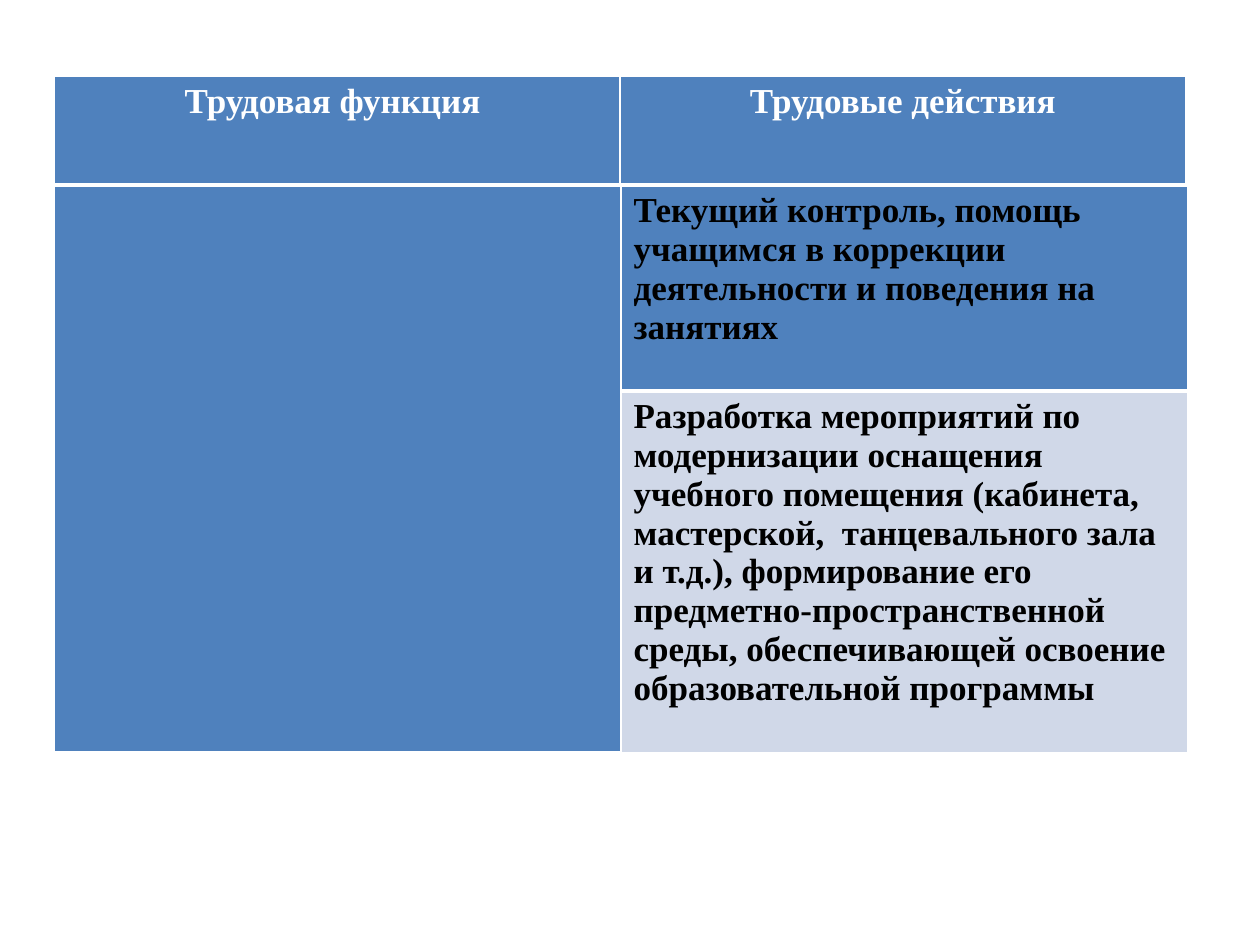
from lxml import etree
from pptx import Presentation
from pptx.dml.color import RGBColor
from pptx.enum.text import PP_ALIGN
from pptx.oxml.ns import qn
from pptx.util import Emu, Pt

CENTER, LEFT = PP_ALIGN.CENTER, PP_ALIGN.LEFT
SCALE = 914400 / 126
COLORS = {"blue": "4F81BD", "pale": "D0D8E8", "white": "FFFFFF", "black": "000000"}


def px(n):
    return Emu(round(n * SCALE))


def style(cell, fill, ink, align, base):
    # Borders come before the fill in the cell properties
    props = cell._tc.get_or_add_tcPr()
    for side, width in (("L", 1), ("R", 1), ("T", 1), ("B", base)):
        line = etree.SubElement(props, qn("a:ln" + side), w=str(Pt(width)))
        solid = etree.SubElement(line, qn("a:solidFill"))
        etree.SubElement(solid, qn("a:srgbClr"), val=COLORS["white"])
    cell.fill.solid()
    cell.fill.fore_color.rgb = RGBColor.from_string(COLORS[fill])
    para = cell.text_frame.paragraphs[0]
    para.alignment = align
    font = para.font
    font.name, font.size, font.bold = "Times New Roman", Pt(20), True
    font.color.rgb = RGBColor.from_string(COLORS[ink])


prs = Presentation()
prs.slide_width, prs.slide_height = px(1260), px(945)
slide = prs.slides.add_slide(prs.slide_layouts[6])

actions = [
    "Текущий контроль, помощь учащимся в коррекции деятельности и поведения на занятиях",
    "Разработка мероприятий по модернизации оснащения учебного помещения (кабинета, "
    "  мастерской,  танцевального зала и т.д.), формирование его "
    "предметно-пространственной среды, обеспечивающей освоение образовательной программы",
]

# Each table: top, column width, row heights, ink, alignment, rows of (text, fill, bottom line)
tables = [
    (185, 567, [206, 362], "black", LEFT, [
        [("", "blue", 3), (actions[0], "blue", 3)],
        [("", "blue", 3), (actions[1], "pale", 1)],
    ]),
    (76, 566, [109], "white", CENTER, [
        [("Трудовая функция ", "blue", 3), ("Трудовые действия", "blue", 3)],
    ]),
]

for top, wide, highs, ink, align, rows in tables:
    frame = slide.shapes.add_table(len(rows), 2, px(54), px(top), px(2 * wide), px(sum(highs)))
    table = frame.table
    table.first_row = table.horz_banding = False
    for col in table.columns:
        col.width = px(wide)
    for r, (high, row) in enumerate(zip(highs, rows)):
        table.rows[r].height = px(high)
        for c, (text, fill, base) in enumerate(row):
            cell = table.cell(r, c)
            cell.text = text
            style(cell, fill, ink, align, base)
    # The left column is one cell over all rows
    if len(rows) > 1:
        table.cell(0, 0).merge(table.cell(len(rows) - 1, 0))

prs.save("out.pptx")
